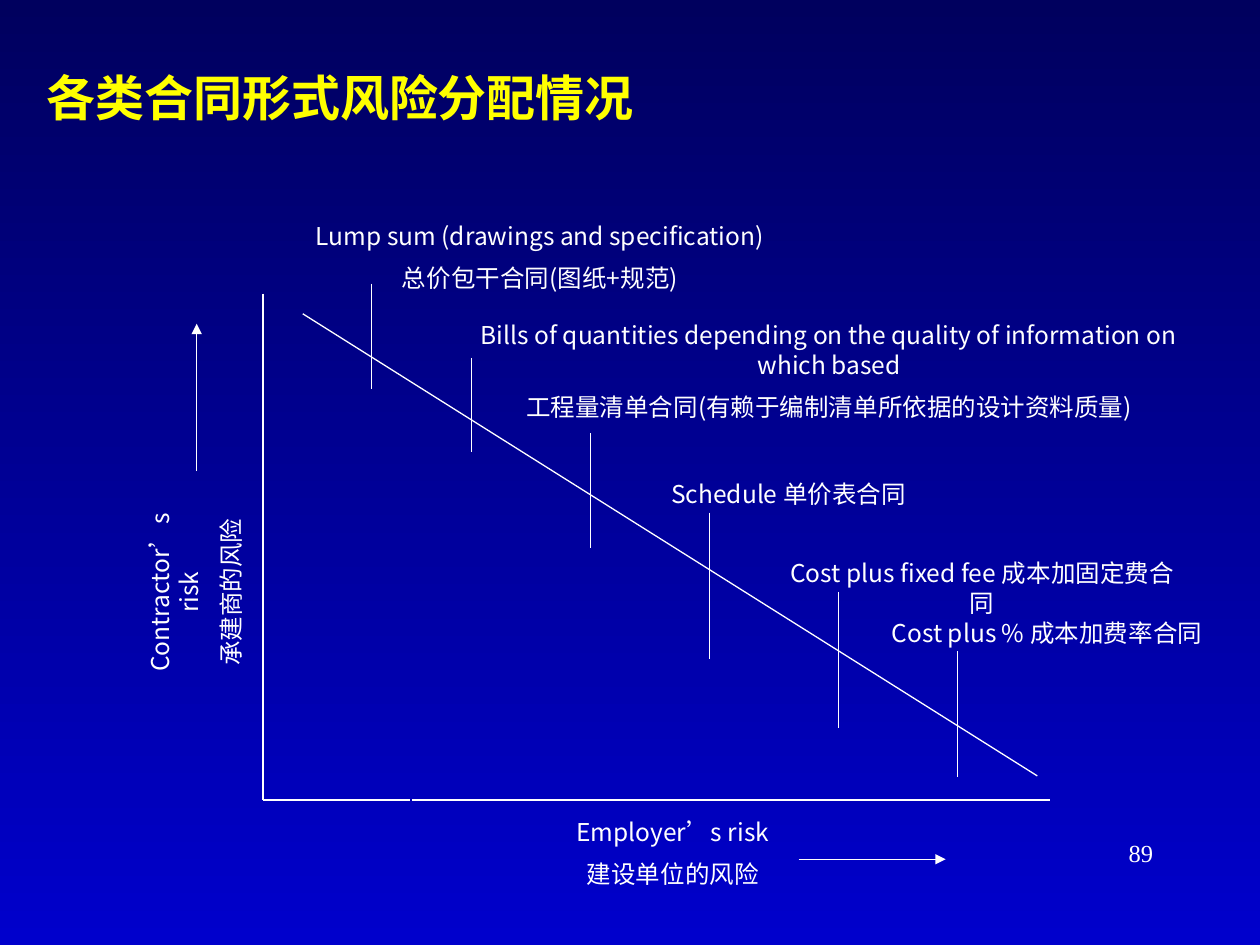
from lxml import etree
from pptx import Presentation
from pptx.dml.color import RGBColor
from pptx.enum.shapes import MSO_CONNECTOR
from pptx.enum.text import MSO_ANCHOR, MSO_AUTO_SIZE, PP_ALIGN
from pptx.oxml.ns import qn
from pptx.util import Pt

STRAIGHT = MSO_CONNECTOR.STRAIGHT
TOP = MSO_ANCHOR.TOP
NO_FIT = MSO_AUTO_SIZE.NONE
LEFT, CENTER, RIGHT = PP_ALIGN.LEFT, PP_ALIGN.CENTER, PP_ALIGN.RIGHT
COLORS = {"top": "00005E", "bottom": "0000CC", "title": "FFFF00", "white": "FFFFFF"}
SANS, SERIF = "Noto Sans CJK SC", "Times New Roman"


def write(box, text, size=14, font=SANS, color="white", bold=False, align=CENTER,
          leading=17):
    """Fill a shape with one paragraph per line of text."""
    frame = box.text_frame
    frame.word_wrap = True
    frame.auto_size = NO_FIT
    frame.vertical_anchor = TOP
    frame.text = text
    for index, para in enumerate(frame.paragraphs):
        para.alignment = align
        para.line_spacing = Pt(leading)
        para.space_before = Pt(7 if index else 0)
        for span in para.runs:
            span.font.size = Pt(size)
            span.font.bold = bold
            span.font.name = font
            span.font.color.rgb = RGBColor.from_string(COLORS[color])
            east_asian = etree.SubElement(span.font._element, qn("a:ea"))
            east_asian.set("typeface", font)


def draw_line(x1, y1, x2, y2, arrow=False):
    line = page.shapes.add_connector(STRAIGHT, Pt(x1), Pt(y1), Pt(x2), Pt(y2))
    line.line.color.rgb = RGBColor.from_string(COLORS["white"])
    line.line.width = Pt(0.75)
    if arrow:
        etree.SubElement(line.line._get_or_add_ln(), qn("a:tailEnd"), type="triangle")
    etree.SubElement(line._element.spPr, qn("a:effectLst"))


deck = Presentation()
deck.slide_width, deck.slide_height = Pt(720), Pt(540)
page = deck.slides.add_slide(deck.slide_layouts[5])

# Background gradient, dark at the top
backdrop = page.background.fill
backdrop.gradient()
backdrop.gradient_angle = 270
for stop, name in zip(backdrop.gradient_stops, ("top", "bottom")):
    stop.color.rgb = RGBColor.from_string(COLORS[name])

# Title
title = page.shapes.title
title.left, title.top, title.width, title.height = Pt(19.4), Pt(34.6), Pt(658), Pt(90)
write(title, "各类合同形式风险分配情况", size=28, color="title", bold=True,
      align=LEFT, leading=34)

# Axes, drawn in segments
AXIS_X, AXIS_Y = 150.3, 457.2
for start, end in ((167.8, 234), (229, AXIS_Y)):
    draw_line(AXIS_X, start, AXIS_X, end)
for start, end in ((AXIS_X, 234), (235.4, 475.2), (468, 599.8)):
    draw_line(start, AXIS_Y, end, AXIS_Y)

# Arrows of growing risk
draw_line(112.4, 269.2, 112.4, 185, arrow=True)
draw_line(456.4, 491, 540.4, 491, arrow=True)

# Risk line and one tick per contract type
draw_line(173, 179.3, 592.8, 443.4)
for x, top, bottom in ((212.5, 162, 222.4), (269.3, 204.5, 258.5), (337.4, 247.5, 313.2),
                       (405.4, 293, 376.5), (479, 338.2, 416), (547.2, 372.2, 444)):
    draw_line(x, top, x, bottom)

# Labels: left, top, width, height, rotation, text
labels = (
    (52.6, 305.3, 118.8, 66.2, 270, "Contractor’s risk\n承建商的风险"),
    (312.5, 463, 144, 49.7, 0, "Employer’s risk\n建设单位的风险"),
    (501.8, 349.2, 193, 41, 0, "Cost plus % 成本加费率合同"),
    (439.2, 315.4, 244, 23.8, 0, "Cost plus fixed fee 成本加固定费合同"),
    (354.2, 270, 193, 23.8, 0, "Schedule 单价表合同"),
    (247, 179.3, 453.6, 66.2, 0,
     "Bills of quantities depending on the quality of information on which based\n"
     "工程量清单合同(有赖于编制清单所依据的设计资料质量)"),
    (161.3, 122.4, 294.5, 49, 0,
     "Lump sum (drawings and specification)\n总价包干合同(图纸+规范)"),
)
for left, top, width, height, rotation, text in labels:
    label = page.shapes.add_textbox(Pt(left), Pt(top), Pt(width), Pt(height))
    label.rotation = rotation
    write(label, text)

# Page number
number = page.shapes.add_textbox(Pt(516.2), Pt(475.2), Pt(149.8), Pt(36))
write(number, "89", font=SERIF, align=RIGHT)

deck.save("out.pptx")
